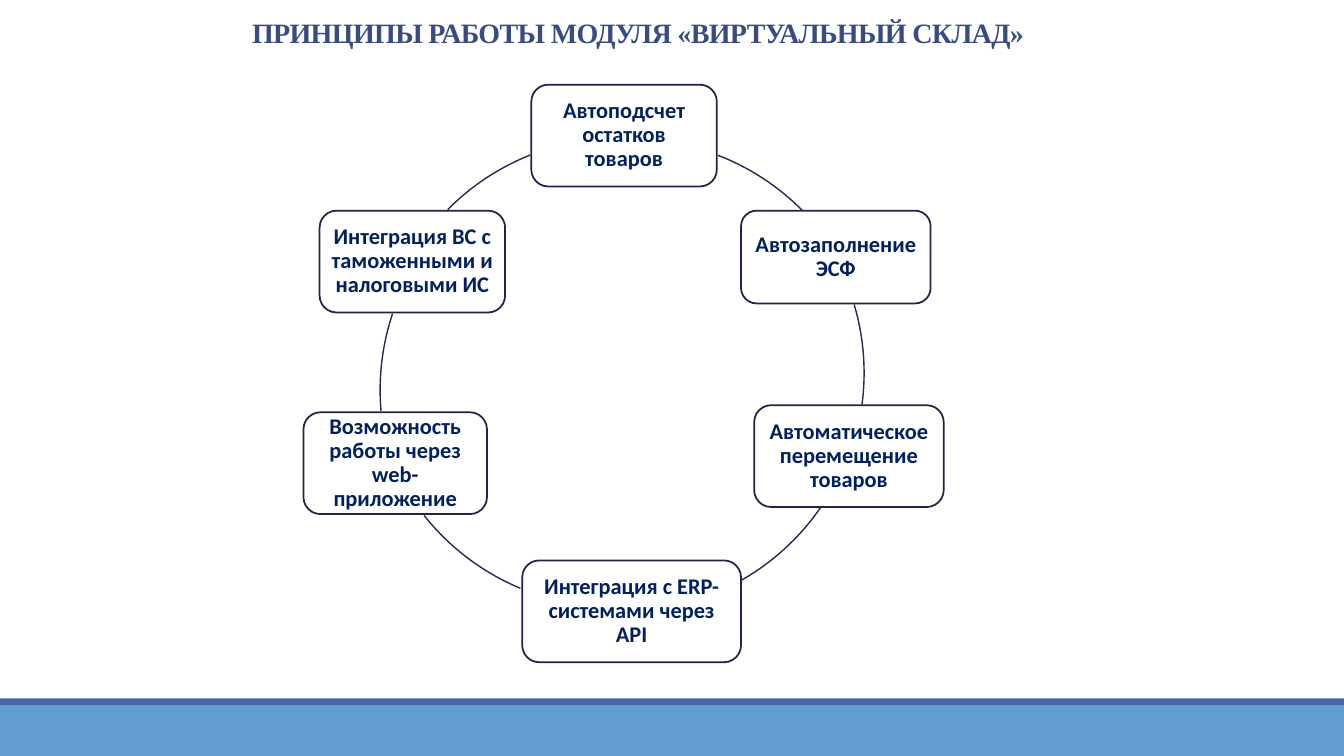
"""Build a slide with the six working principles of the virtual warehouse module set in a ring."""
from pptx import Presentation
from pptx.dml.color import RGBColor as Rgb
from pptx.enum.shapes import MSO_SHAPE as Kind
from pptx.enum.text import MSO_ANCHOR as Anchor, PP_ALIGN as Align
from pptx.util import Inches, Pt

HUES = {"title": "384C81", "text": "002060", "edge": "21244A", "arc": "242852",
        "card": "FFFFFF", "band": "629DD1", "rule": "4A66AC"}

TITLE = "ПРИНЦИПЫ РАБОТЫ МОДУЛЯ «ВИРТУАЛЬНЫЙ СКЛАД»"

CARDS = [
    ("Автоподсчет остатков товаров", (5.27, 0.84, 1.84, 1.01)),
    ("Автозаполнение ЭСФ", (7.35, 2.09, 1.88, 0.92)),
    ("Автоматическое перемещение товаров", (7.48, 4.02, 1.88, 1.01)),
    ("Интеграция с ERP-системами через АPI", (5.18, 5.56, 2.17, 1.01)),
    ("Возможность работы через web-приложение", (3.01, 4.09, 1.82, 1.01)),
    ("Интеграция ВС с таможенными и налоговыми ИС", (3.17, 2.09, 1.84, 1.01)),
]

RING = 4.78
ARCS = [
    ((3.87, 1.38), (291.1, 315.3)),
    ((3.79, 1.31), (343.5, 7.5)),
    ((3.78, 1.29), (34.6, 60.5)),
    ((3.69, 1.24), (112.6, 141.6)),
    ((3.77, 1.48), (175, 198.5)),
    ((3.75, 1.37), (224.7, 248.4)),
]

BARS = [("band", (0, 7, 13.33, 0.5)), ("rule", (0, 6.93, 13.33, 0.07))]


def tint(hue):
    return Rgb.from_string(HUES[hue])


def draw(slide, kind, box, fill=None, edge=None, width=1):
    shape = slide.shapes.add_shape(kind, *map(Inches, box))
    shape.shadow.inherit = False
    if fill:
        shape.fill.solid()
        shape.fill.fore_color.rgb = tint(fill)
    else:
        shape.fill.background()
    if edge:
        shape.line.color.rgb = tint(edge)
        shape.line.width = Pt(width)
    else:
        shape.line.fill.background()
    return shape


def write(shape, text, font, size, hue, align, pad):
    frame = shape.text_frame
    frame.word_wrap = True
    frame.vertical_anchor = Anchor.MIDDLE
    frame.margin_left = frame.margin_right = Inches(pad)
    frame.margin_top = frame.margin_bottom = Inches(0.05)
    para = frame.paragraphs[0]
    para.alignment = align
    para.line_spacing = 0.9
    run = para.add_run()
    run.text = text
    run.font.name = font
    run.font.size = Pt(size)
    run.font.bold = True
    run.font.color.rgb = tint(hue)
    return run


def main():
    deck = Presentation()
    deck.slide_width, deck.slide_height = Inches(13.33), Inches(7.5)
    slide = deck.slides.add_slide(deck.slide_layouts[5])

    for hue, box in BARS:
        draw(slide, Kind.RECTANGLE, box, fill=hue)

    for (left, top), turns in ARCS:
        arc = draw(slide, Kind.ARC, (left, top, RING, RING), edge="arc")
        for i, angle in enumerate(turns):
            arc.adjustments[i] = angle * 0.6

    for text, box in CARDS:
        card = draw(slide, Kind.ROUNDED_RECTANGLE, box, "card", "edge", 1.25)
        write(card, text, "Calibri", 16, "text", Align.CENTER, 0.07)

    title = slide.shapes.title
    title.left, title.top = Inches(2.4), Inches(0.12)
    title.width, title.height = Inches(8.76), Inches(0.44)
    run = write(title, TITLE, "Times New Roman", 20, "title", Align.LEFT, 0.1)
    run.font._element.set("spc", "-50")

    deck.save("out.pptx")


if __name__ == "__main__":
    main()
